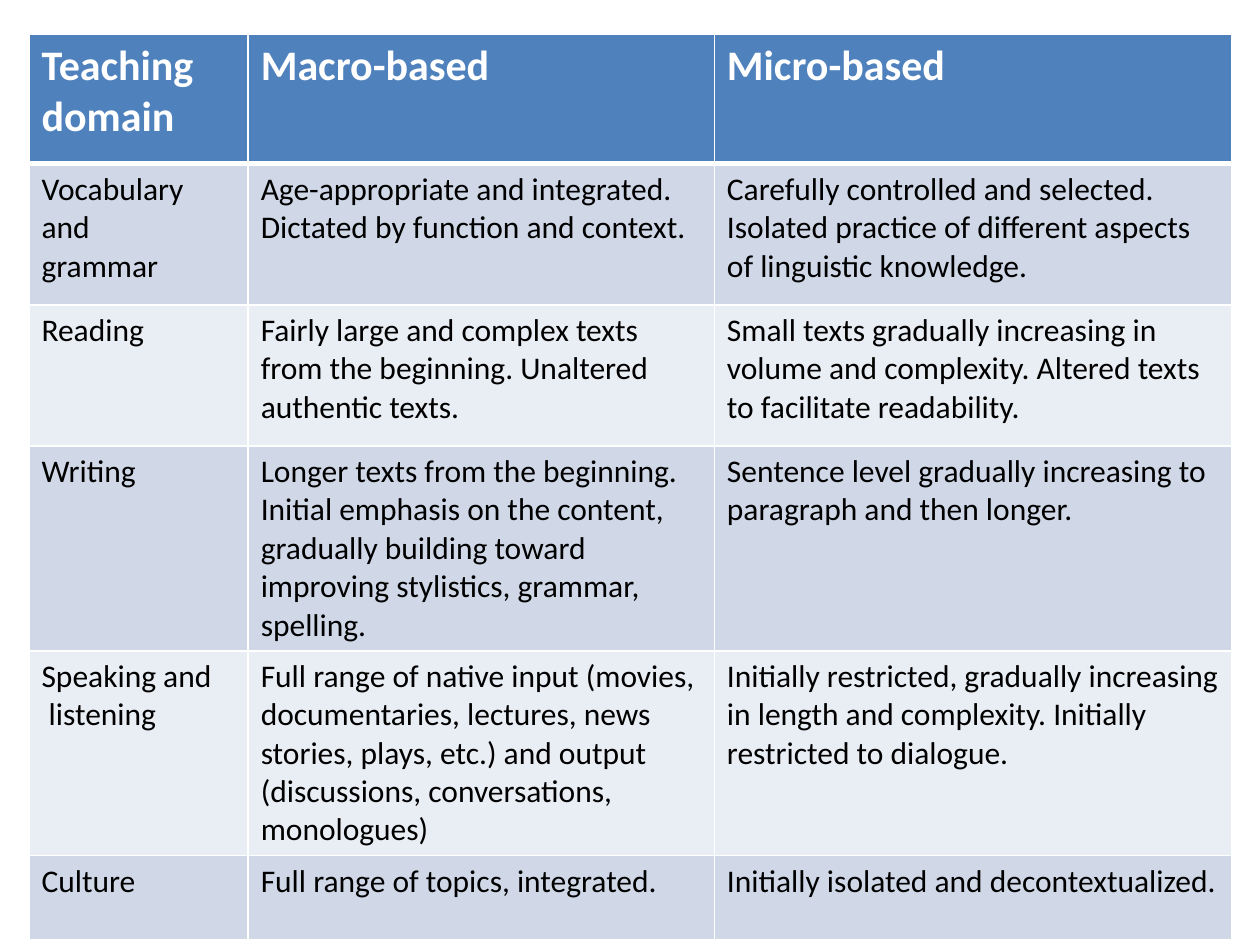
from dataclasses import dataclass

from lxml.etree import SubElement
from pptx import Presentation
from pptx.dml.color import RGBColor
from pptx.oxml.ns import qn
from pptx.util import Inches, Pt


@dataclass(frozen=True)
class Theme:
    font: str = "Calibri"
    header_fill: str = "4F81BD"
    band_fills: tuple = ("D0D8E8", "E9EDF4")
    header_text: str = "FFFFFF"
    body_text: str = "000000"
    rule: str = "FFFFFF"
    header_size: int = 24
    body_size: int = 18
    rule_width: int = 1
    header_rule_width: int = 3


THEME = Theme()
LEFT, TOP = 0.23, 0.27
COLUMN_WIDTHS = [1.74, 3.7, 4.11]
ROW_HEIGHTS = [1.03] + [1.12] * 4 + [0.67]

APPROACHES = [
    ("Teaching domain", "Macro-based", "Micro-based"),
    ("Vocabulary and\ngrammar",
     "Age-appropriate and integrated. Dictated by function and context.",
     "Carefully controlled and selected. Isolated practice of different "
     "aspects of linguistic knowledge."),
    ("Reading",
     "Fairly large and complex texts from the beginning. Unaltered authentic "
     "texts.",
     "Small texts gradually increasing in volume and complexity. Altered texts "
     "to facilitate readability."),
    ("Writing",
     "Longer texts from the beginning. Initial emphasis on the content, "
     "gradually building toward improving stylistics, grammar, spelling.",
     "Sentence level gradually increasing to paragraph and then longer."),
    ("Speaking and\n listening",
     "Full range of native input (movies, documentaries, lectures, news "
     "stories, plays, etc.) and output (discussions, conversations, "
     "monologues)",
     "Initially restricted, gradually increasing in length and complexity. "
     "Initially restricted to dialogue."),
    ("Culture",
     "Full range of topics, integrated.",
     "Initially isolated and decontextualized."),
]


def set_borders(cell, widths):
    """Draw the cell's sides; widths maps L, R, T, B (in that order) to points."""
    properties = cell._tc.get_or_add_tcPr()
    for side, width in widths.items():
        line = SubElement(properties, qn(f"a:ln{side}"), w=str(Pt(width)))
        solid = SubElement(line, qn("a:solidFill"))
        SubElement(solid, qn("a:srgbClr"), val=THEME.rule)


def write_text(cell, text, color, font_format):
    cell.text = text
    for paragraph in cell.text_frame.paragraphs:
        for run in paragraph.runs:
            for name, value in font_format.items():
                setattr(run.font, name, value)
            run.font.color.rgb = RGBColor.from_string(color)


def style_cell(cell, text, row):
    is_header = row == 0
    widths = dict.fromkeys("LRTB", THEME.rule_width)
    if is_header:
        widths["B"] = THEME.header_rule_width
    elif row == 1:
        widths["T"] = THEME.header_rule_width
    set_borders(cell, widths)

    fill = THEME.header_fill if is_header else THEME.band_fills[(row - 1) % 2]
    cell.fill.solid()
    cell.fill.fore_color.rgb = RGBColor.from_string(fill)

    color = THEME.header_text if is_header else THEME.body_text
    size = THEME.header_size if is_header else THEME.body_size
    write_text(cell, text, color,
               {"name": THEME.font, "size": Pt(size), "bold": is_header})


def add_comparison_table(slide):
    table = slide.shapes.add_table(
        len(APPROACHES), len(COLUMN_WIDTHS), Inches(LEFT), Inches(TOP),
        Inches(sum(COLUMN_WIDTHS)), Inches(sum(ROW_HEIGHTS))).table
    for column, width in zip(table.columns, COLUMN_WIDTHS):
        column.width = Inches(width)
    for row, height in zip(table.rows, ROW_HEIGHTS):
        row.height = Inches(height)
    for row, texts in enumerate(APPROACHES):
        for column, text in enumerate(texts):
            style_cell(table.cell(row, column), text, row)


def main():
    presentation = Presentation()
    presentation.slide_width = Inches(10)
    presentation.slide_height = Inches(7.5)
    blank_layout = presentation.slide_layouts[6]
    add_comparison_table(presentation.slides.add_slide(blank_layout))
    presentation.save("out.pptx")


if __name__ == "__main__":
    main()
